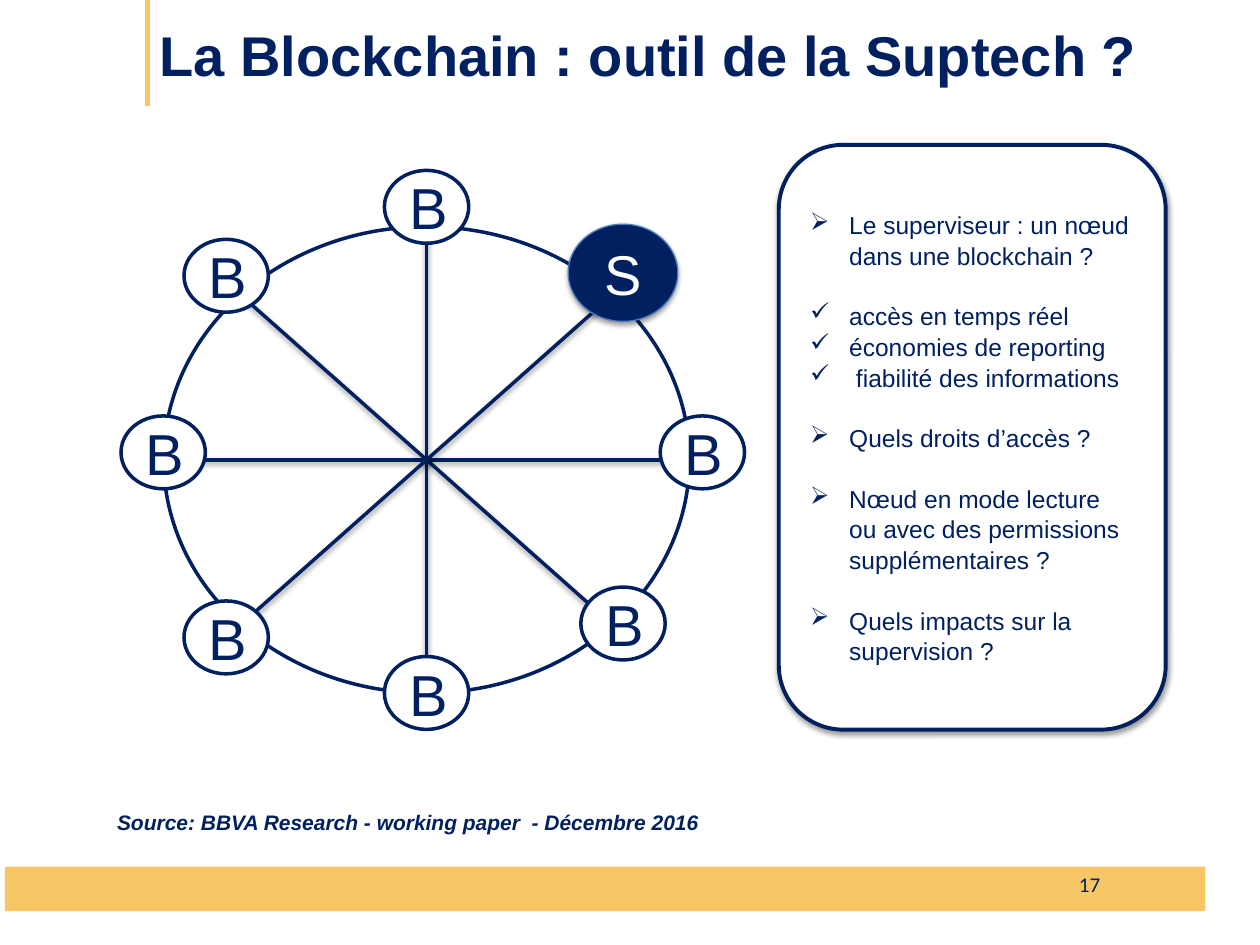
from dataclasses import dataclass
from math import cos, pi, sin

from lxml.etree import SubElement
from pptx import Presentation
from pptx.dml.color import RGBColor
from pptx.enum.shapes import MSO_CONNECTOR, MSO_SHAPE
from pptx.enum.text import MSO_ANCHOR, PP_ALIGN
from pptx.oxml.ns import qn
from pptx.util import Cm, Pt

NAVY, GOLD, WHITE, RIM = "002060", "F7C765", "FFFFFF", "4B7EBC"

# Wheel geometry in centimetres
CENTRE_X, CENTRE_Y = 8.6, 9.27
RADIUS_X, RADIUS_Y = 5.3, 4.7


@dataclass
class Node:
    x: float
    y: float
    label: str = "B"
    width: float = 1.7
    height: float = 1.47
    size: float = 33
    fill: str = WHITE
    rim: str = NAVY
    rim_width: float = 2
    ink: str = NAVY
    align: PP_ALIGN = PP_ALIGN.LEFT
    shadow: bool = False


@dataclass
class Point:
    text: str
    bullet: str = "➢"
    gap: bool = True


NODES = [
    Node(12.56, 5.5, "S", 2.21, 1.96, 32, NAVY, RIM, 0.75, WHITE, PP_ALIGN.CENTER, True),
    Node(8.6, 13.97),
    Node(8.6, 4.17),
    Node(12.56, 12.57),
    Node(14.16, 9.12),
    Node(3.29, 9.12),
    Node(4.56, 5.56),
    Node(4.56, 12.85),
]

POINTS = [
    Point("Le superviseur : un nœud dans une blockchain ?", gap=False),
    Point("accès en temps réel", "✓"),
    Point("économies de reporting", "✓", gap=False),
    Point(" fiabilité des informations", "✓", gap=False),
    Point("Quels droits d’accès ?"),
    Point("Nœud en mode lecture ou avec des permissions supplémentaires ?"),
    Point("Quels impacts sur la supervision ?"),
]


def colour(code: str) -> RGBColor:
    return RGBColor.from_string(code)


def set_effects(shape, shadow: bool) -> None:
    """Give the shape its own effect list, with a soft shadow or nothing."""
    effects = SubElement(shape._element.spPr, qn("a:effectLst"))
    if shadow:
        outer = SubElement(effects, qn("a:outerShdw"), blurRad=str(Pt(3.1)),
                           dist=str(Pt(1.6)), dir="5400000", rotWithShape="0")
        black = SubElement(outer, qn("a:srgbClr"), val="000000")
        SubElement(black, qn("a:alpha"), val="38000")


def add_box(page, kind: MSO_SHAPE, left: float, top: float, width: float, height: float,
            fill: str, line: str = "", line_width: float = 2, shadow: bool = False):
    box = page.shapes.add_shape(kind, Cm(left), Cm(top), Cm(width), Cm(height))
    box.fill.solid()
    box.fill.fore_color.rgb = colour(fill)
    if line:
        box.line.color.rgb = colour(line)
        box.line.width = Pt(line_width)
    else:
        box.line.fill.background()
    set_effects(box, shadow)
    return box


def add_line(page, x1: float, y1: float, x2: float, y2: float,
             line: str = NAVY, width: float = 2, shadow: bool = False) -> None:
    connector = page.shapes.add_connector(MSO_CONNECTOR.STRAIGHT, Cm(x1), Cm(y1), Cm(x2), Cm(y2))
    connector.line.color.rgb = colour(line)
    connector.line.width = Pt(width)
    set_effects(connector, shadow)


def write(para, text: str, *, size: float, ink: str = NAVY, font: str = "Arial",
          bold: bool = False, italic: bool = False, align: PP_ALIGN = PP_ALIGN.LEFT) -> None:
    para.alignment = align
    span = para.add_run()
    span.text = text
    span.font.name = font
    span.font.size = Pt(size)
    span.font.bold = bold
    span.font.italic = italic
    span.font.color.rgb = colour(ink)


def first_para(box):
    frame = box.text_frame
    frame.word_wrap = True
    frame.vertical_anchor = MSO_ANCHOR.MIDDLE
    return frame.paragraphs[0]


def add_text(page, left: float, top: float, width: float, height: float,
             text: str, **style) -> None:
    box = page.shapes.add_textbox(Cm(left), Cm(top), Cm(width), Cm(height))
    write(first_para(box), text, **style)


def add_node(page, node: Node) -> None:
    box = add_box(page, MSO_SHAPE.OVAL, node.x - node.width / 2, node.y - node.height / 2,
                  node.width, node.height, node.fill, node.rim, node.rim_width, node.shadow)
    write(first_para(box), node.label, size=node.size, ink=node.ink, align=node.align)


def add_points(box, points: list[Point]) -> None:
    para = first_para(box)
    for number, point in enumerate(points):
        if number:
            para = box.text_frame.add_paragraph()
        properties = para._p.get_or_add_pPr()
        properties.set("marL", str(Cm(0.79)))
        properties.set("indent", str(-Cm(0.79)))
        SubElement(properties, qn("a:buChar"), char=point.bullet)
        para.line_spacing = 1.05
        if point.gap:
            para.space_before = Pt(16.8)
        write(para, point.text, size=14)


def main() -> None:
    deck = Presentation()
    deck.slide_width, deck.slide_height = Cm(25.4), Cm(19.05)
    page = deck.slides.add_slide(deck.slide_layouts[6])

    # Footer band, title rule and title
    add_box(page, MSO_SHAPE.RECTANGLE, 0.1, 17.47, 24.2, 0.9, GOLD)
    add_line(page, 2.97, 0, 2.97, 2.13, GOLD, 2.75)
    add_text(page, 2.97, 0, 21.34, 2.18, "La Blockchain : outil de la Suptech ?", size=32, bold=True)

    # Wheel with its four diameters
    add_box(page, MSO_SHAPE.OVAL, CENTRE_X - RADIUS_X, CENTRE_Y - RADIUS_Y,
            2 * RADIUS_X, 2 * RADIUS_Y, WHITE, NAVY)
    for step in range(4):
        across = RADIUS_X * cos(step * pi / 4)
        down = RADIUS_Y * sin(step * pi / 4)
        add_line(page, CENTRE_X - across, CENTRE_Y - down,
                 CENTRE_X + across, CENTRE_Y + down, shadow=True)
    for node in NODES:
        add_node(page, node)

    # Panel of questions
    panel = add_box(page, MSO_SHAPE.ROUNDED_RECTANGLE, 15.7, 2.92, 7.8, 11.79,
                    WHITE, NAVY, 2.25, shadow=True)
    add_points(panel, POINTS)

    # Source and page number
    source = add_box(page, MSO_SHAPE.RECTANGLE, 2.11, 15.93, 12.9, 1.27, WHITE, WHITE)
    write(first_para(source), "Source: BBVA Research - working paper  - Décembre 2016",
          size=12, bold=True, italic=True)
    add_text(page, 16.51, 17.32, 5.92, 1.02, "17", size=12, font="Calibri", align=PP_ALIGN.RIGHT)

    deck.save("out.pptx")


if __name__ == "__main__":
    main()
